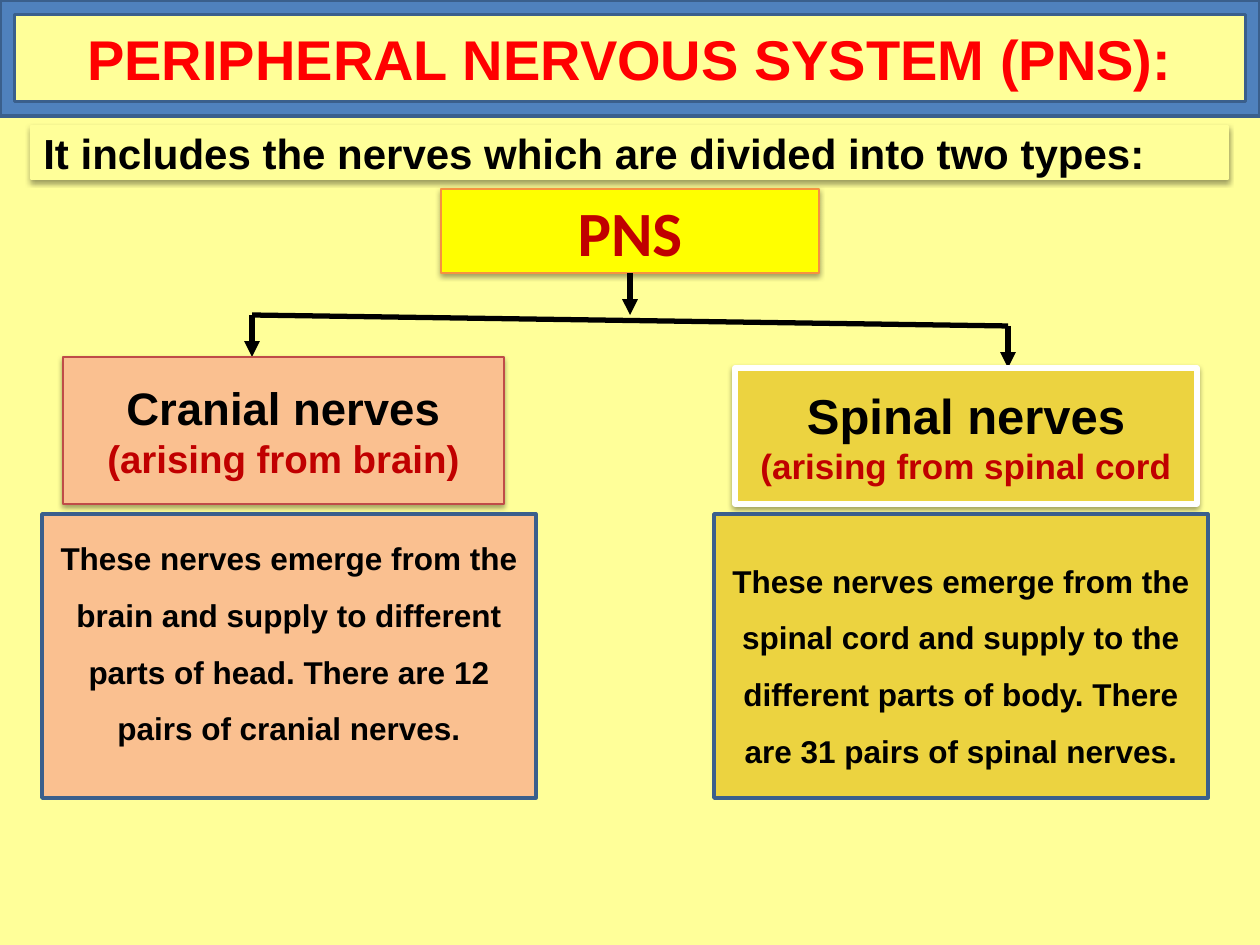
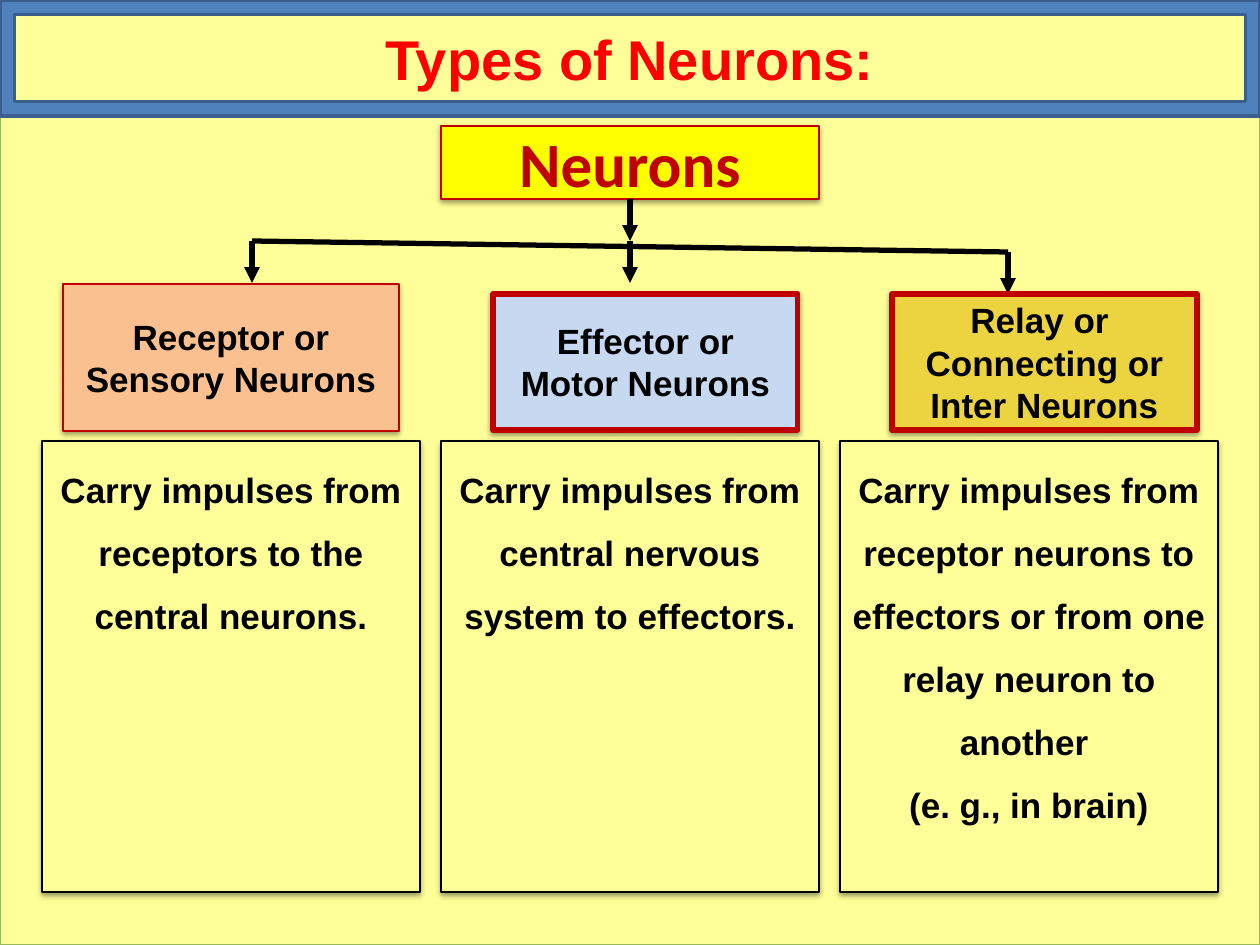
"""Build two slides on the nervous system as tree charts."""
import pptx
import pptx.util
import pptx.dml.color
import pptx.enum.shapes
import pptx.enum.text
import pptx.oxml.ns
from lxml import etree

Rgb = pptx.dml.color.RGBColor
Kind = pptx.enum.shapes.MSO_SHAPE
Align = pptx.enum.text.PP_ALIGN
Anchor = pptx.enum.text.MSO_ANCHOR
Pt = pptx.util.Pt
qn = pptx.oxml.ns.qn

CREAM = Rgb(0xFF, 0xFF, 0x99)
BLUE = Rgb(0x4F, 0x81, 0xBD)
NAVY = Rgb(0x3A, 0x5F, 0x8C)
RED = Rgb(0xFF, 0x00, 0x00)
DARK = Rgb(0xC0, 0x00, 0x00)
BRICK = Rgb(0xBF, 0x4C, 0x48)
PEACH = Rgb(0xFA, 0xC0, 0x90)
GOLD = Rgb(0xEC, 0xD3, 0x40)
SKY = Rgb(0xC6, 0xD9, 0xF1)
YELLOW = Rgb(0xFF, 0xFF, 0x00)
ORANGE = Rgb(0xF6, 0x92, 0x40)
GREEN = Rgb(0x98, 0xB9, 0x55)
WHITE = Rgb(0xFF, 0xFF, 0xFF)
BLACK = Rgb(0x00, 0x00, 0x00)

WIDE, HIGH = 1260, 945
UNIT = 914400 / 126
THIN = 0.75
LEFT, MID, RIGHT = 252, 630, 1008
DROP, SLANT = 42, 11

SLIDES = [
    {
        "title": "PERIPHERAL NERVOUS SYSTEM (PNS):",
        "edge": CREAM,
        "intro": "It includes the nerves which are divided into two types:",
        "root": ("PNS", 189, 84, ORANGE),
        "stems": [LEFT, RIGHT],
        "heads": [
            ((63, 357, 441, 147), PEACH, BRICK, THIN,
             [("Cranial nerves", 26, BLACK), ("(arising from brain)", 22, DARK)]),
            ((735, 368, 462, 136), GOLD, WHITE, 3,
             [("Spinal nerves", 28, BLACK), ("(arising from spinal cord", 20, DARK)]),
        ],
        "grid": {"top": 514, "wide": 494, "high": 284, "step": 672},
        "look": {"edge": NAVY, "width": 2, "shade": False},
        "size": 18,
        "notes": [
            (PEACH, Anchor.TOP,
             ["These nerves emerge from the brain and supply to different "
              "parts of head. There are 12 pairs of cranial nerves."]),
            (GOLD, Anchor.MIDDLE,
             ["These nerves emerge from the spinal cord and supply to the "
              "different parts of body. There are 31 pairs of spinal nerves."]),
        ],
    },
    {
        "title": "Types of Neurons:",
        "edge": GREEN,
        "intro": None,
        "root": ("Neurons", 126, 73, DARK),
        "stems": [LEFT, MID, RIGHT],
        "heads": [
            ((63, 284, 336, 147), PEACH, DARK, THIN,
             [("Receptor or Sensory Neurons", 20, BLACK)]),
            ((493, 294, 305, 136), SKY, DARK, 3,
             [("Effector or Motor Neurons", 20, BLACK)]),
            ((892, 294, 305, 136), GOLD, DARK, 3,
             [("Relay or ", 20, BLACK),
              ("Connecting or Inter Neurons", 20, BLACK)]),
        ],
        "grid": {"top": 441, "wide": 378, "high": 451, "step": 399},
        "look": {"edge": BLACK, "width": THIN, "shade": True},
        "size": 20,
        "notes": [
            (CREAM, Anchor.TOP,
             ["Carry impulses from receptors to the central neurons."]),
            (CREAM, Anchor.TOP,
             ["Carry impulses from central nervous system to effectors."]),
            (CREAM, Anchor.TOP,
             ["Carry impulses from receptor neurons to effectors or from one "
              "relay neuron to another ", "(e. g., in brain)"]),
        ],
    },
]


def px(*vals):
    return [round(val * UNIT) for val in vals]


def put(thing, form):
    for name, val in form.items():
        setattr(thing, name, val)


def cast(shape):
    fx = shape._element.spPr.find(qn("a:effectLst"))
    glow = etree.SubElement(fx, qn("a:outerShdw"), blurRad=str(Pt(3.1)),
                            dist=str(Pt(1.6)), dir="5400000", rotWithShape="0")
    tint = etree.SubElement(glow, qn("a:srgbClr"), val="000000")
    etree.SubElement(tint, qn("a:alpha"), val="38000")


def box(slide, spot, fill, edge, width=THIN, lines=(), kind=Kind.RECTANGLE,
        shade=True, anchor=Anchor.MIDDLE, font="Arial", **form):
    shape = slide.shapes.add_shape(kind, *px(*spot))
    shape.shadow.inherit = False
    if shade:
        cast(shape)
    shape.fill.solid()
    shape.fill.fore_color.rgb = fill
    shape.line.color.rgb = edge
    shape.line.width = Pt(width)
    frame = shape.text_frame
    put(frame, {"word_wrap": True, "vertical_anchor": anchor})
    for num, (text, size, tint) in enumerate(lines):
        para = frame.add_paragraph() if num else frame.paragraphs[0]
        put(para, {"alignment": Align.CENTER, **form})
        run = para.add_run()
        run.text = text
        put(run.font, {"name": font, "size": Pt(size), "bold": True})
        run.font.color.rgb = tint


def link(slide, start, end, arrow=True):
    line = slide.shapes.add_connector(
        pptx.enum.shapes.MSO_CONNECTOR.STRAIGHT, *px(*start, *end))
    line.line.color.rgb = BLACK
    line.line.width = Pt(3)
    props = line._element.spPr
    if arrow:
        etree.SubElement(props.find(qn("a:ln")), qn("a:tailEnd"), type="triangle")
    etree.SubElement(props, qn("a:effectLst"))


def base(slide, data):
    box(slide, (0, 0, WIDE, HIGH), CREAM, data["edge"])
    box(slide, (0, 0, WIDE, 116), BLUE, NAVY, 2, [(data["title"], 32, RED)],
        kind=Kind.FRAME, shade=False)
    if data["intro"]:
        box(slide, (31, 126, 1197, 53), CREAM, CREAM,
            lines=[(data["intro"], 24, BLACK)], alignment=Align.LEFT)


def tree(slide, data):
    name, top, high, edge = data["root"]
    box(slide, (441, top, 378, high), YELLOW, edge,
        lines=[(name, 36, DARK)], font="Calibri")
    foot = top + high
    bar = foot + DROP
    link(slide, (LEFT, bar), (RIGHT, bar + SLANT), False)
    link(slide, (MID, foot), (MID, bar))
    for x in data["stems"]:
        y = bar + SLANT * (x == RIGHT)
        link(slide, (x, y), (x, y + DROP))
    for head in data["heads"]:
        box(slide, *head)


def notes(slide, data):
    grid = data["grid"]
    for num, (fill, anchor, texts) in enumerate(data["notes"]):
        spot = (42 + num * grid["step"], grid["top"], grid["wide"], grid["high"])
        lines = [(text, data["size"], BLACK) for text in texts]
        box(slide, spot, fill, lines=lines, anchor=anchor, line_spacing=1.5,
            **data["look"])


def main():
    deck = pptx.Presentation()
    wide, high = px(WIDE, HIGH)
    put(deck, {"slide_width": wide, "slide_height": high})
    for data in SLIDES:
        slide = deck.slides.add_slide(deck.slide_layouts[6])
        for part in (base, tree, notes):
            part(slide, data)
    deck.save("out.pptx")


if __name__ == "__main__":
    main()
